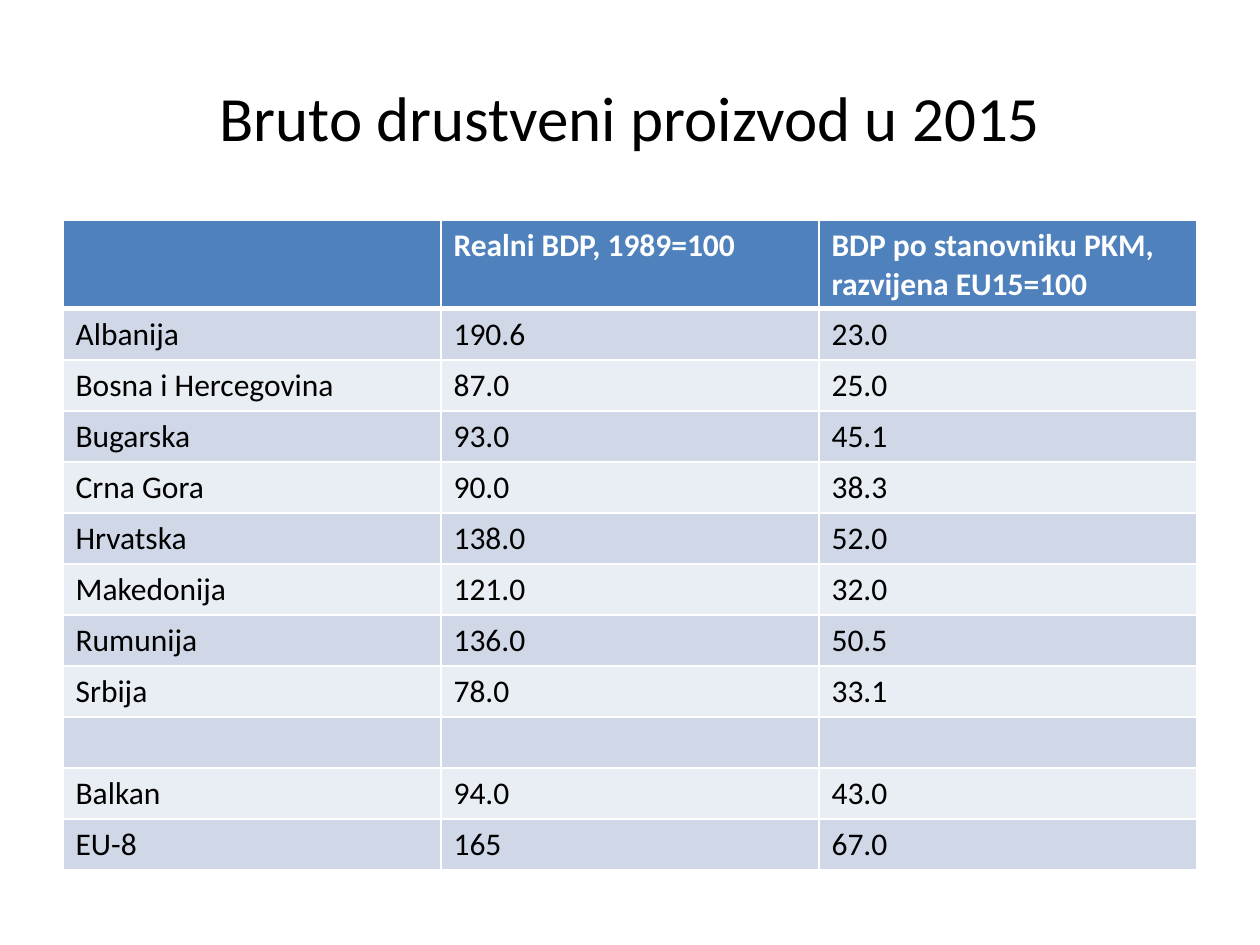
import lxml.etree
import pptx
import pptx.dml.color
import pptx.enum.text
import pptx.oxml.ns
import pptx.util

Inches = pptx.util.Inches
Pt = pptx.util.Pt
RGBColor = pptx.dml.color.RGBColor

FONT = "Calibri"
BLACK = RGBColor(0x00, 0x00, 0x00)
WHITE = RGBColor(0xFF, 0xFF, 0xFF)
HEADER_BLUE = RGBColor(0x4F, 0x81, 0xBD)
BANDS = [RGBColor(0xD0, 0xD8, 0xE8), RGBColor(0xE9, 0xED, 0xF4)]

ROWS = [
    ("", "Realni BDP, 1989=100", "BDP po stanovniku PKM, razvijena EU15=100"),
    ("Albanija", "190.6", "23.0"),
    ("Bosna i Hercegovina", "87.0", "25.0"),
    ("Bugarska", "93.0", "45.1"),
    ("Crna Gora", "90.0", "38.3"),
    ("Hrvatska", "138.0", "52.0"),
    ("Makedonija", "121.0", "32.0"),
    ("Rumunija", "136.0", "50.5"),
    ("Srbija", "78.0", "33.1"),
    ("", "", ""),
    ("Balkan", "94.0", "43.0"),
    ("EU-8", "165", "67.0"),
]
TABLE_HEIGHT = 5.16
HEADER_HEIGHT = 0.7
BODY_HEIGHT = (TABLE_HEIGHT - HEADER_HEIGHT) / (len(ROWS) - 1)


def add_run(paragraph, text, size, color, bold=False):
    run = paragraph.add_run()
    run.text = text
    run.font.name = FONT
    run.font.size = Pt(size)
    run.font.bold = bold
    run.font.color.rgb = color


def set_border(cell, side, width):
    """Draw a white line of the given width in points on side L, R, T or B."""
    qn = pptx.oxml.ns.qn
    properties = cell._tc.get_or_add_tcPr()
    line = lxml.etree.SubElement(properties, qn(f"a:ln{side}"), w=str(Pt(width)))
    solid = lxml.etree.SubElement(line, qn("a:solidFill"))
    lxml.etree.SubElement(solid, qn("a:srgbClr"), val=str(WHITE))


presentation = pptx.Presentation()
presentation.slide_width = Inches(10)
presentation.slide_height = Inches(7.5)
slide = presentation.slides.add_slide(presentation.slide_layouts[6])

title = slide.shapes.add_textbox(Inches(0.5), Inches(0.3), Inches(9), Inches(1.25))
title.text_frame.word_wrap = True
title.text_frame.vertical_anchor = pptx.enum.text.MSO_ANCHOR.MIDDLE
heading = title.text_frame.paragraphs[0]
heading.alignment = pptx.enum.text.PP_ALIGN.CENTER
add_run(heading, "Bruto drustveni proizvod u 2015", 36, BLACK)

gdp_table = slide.shapes.add_table(
    len(ROWS), len(ROWS[0]), Inches(0.5), Inches(1.75), Inches(9), Inches(TABLE_HEIGHT)
).table

for row_index, values in enumerate(ROWS):
    is_header = row_index == 0
    gdp_table.rows[row_index].height = Inches(HEADER_HEIGHT if is_header else BODY_HEIGHT)
    for column_index, value in enumerate(values):
        cell = gdp_table.cell(row_index, column_index)
        # The header is set off from the body by a thicker line.
        widths = {"L": 1, "R": 1, "T": 3 if row_index == 1 else 1, "B": 3 if is_header else 1}
        for side, width in widths.items():
            set_border(cell, side, width)
        cell.fill.solid()
        cell.fill.fore_color.rgb = HEADER_BLUE if is_header else BANDS[(row_index - 1) % 2]
        if value:
            add_run(cell.text_frame.paragraphs[0], value, 18,
                    WHITE if is_header else BLACK, bold=is_header)

presentation.save("out.pptx")
